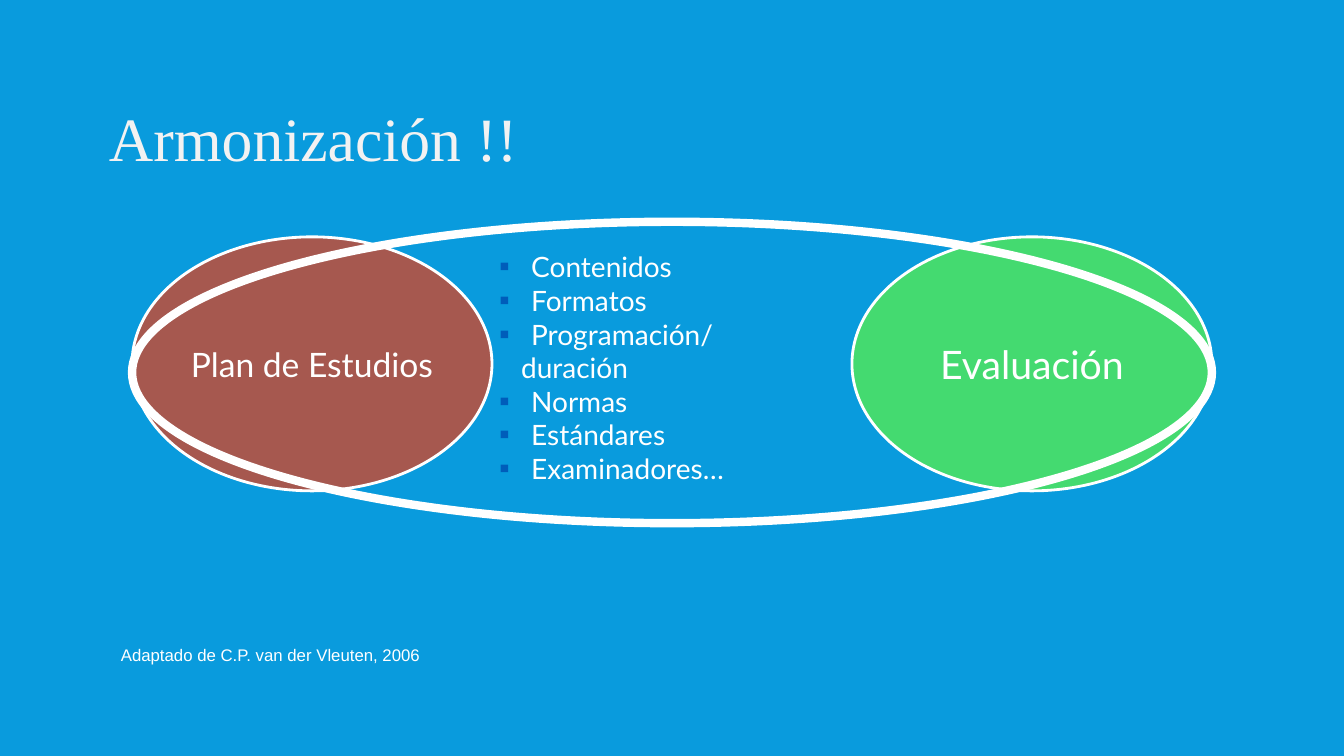
import pptx
import pptx.dml.color
import pptx.enum.shapes
import pptx.enum.text
import pptx.oxml
import pptx.oxml.ns
import pptx.util
from pptx.util import Inches

RGBColor = pptx.dml.color.RGBColor
ANCHOR = pptx.enum.text.MSO_ANCHOR
ALIGN = pptx.enum.text.PP_ALIGN

SKY = RGBColor(0x09, 0x9B, 0xDD)
WHITE = RGBColor(0xFF, 0xFF, 0xFF)
OFF_WHITE = RGBColor(0xF2, 0xF2, 0xF2)
RED = RGBColor(0xFF, 0x33, 0x00)
GREEN = RGBColor(0x66, 0xFF, 0x33)
BULLET_BLUE = RGBColor(0x00, 0x5D, 0xBA)

TOPICS = [
    ("Contenidos", True),
    ("Formatos", True),
    ("Programación/", True),
    ("duración", False),
    ("Normas", True),
    ("Estándares", True),
    ("Examinadores…", True),
]


def write(p, text, name, size, color=WHITE):
    r = p.add_run()
    r.text = text
    font = {"name": name, "size": pptx.util.Pt(size)}
    for key, value in font.items():
        setattr(r.font, key, value)
    r.font.color.rgb = color


def set_indent(p, left, first=0):
    pPr = p._p.get_or_add_pPr()
    pPr.set("marL", str(Inches(left)))
    pPr.set("indent", str(Inches(first)))
    return pPr


def add_bullet(p):
    pPr = set_indent(p, 0.81, -0.31)
    ns = pptx.oxml.ns.nsdecls("a")
    for xml in (
        f'<a:buClr {ns}><a:srgbClr val="{BULLET_BLUE}"/></a:buClr>',
        f'<a:buSzPct {ns} val="55000"/>',
        f'<a:buFont {ns} typeface="Arial"/>',
        f'<a:buChar {ns} char="■"/>',
    ):
        pPr.append(pptx.oxml.parse_xml(xml))


def add_title(s, text):
    title = s.shapes.title
    box = {"left": 0.98, "top": 0.52, "width": 11.36, "height": 1.25}
    for key, value in box.items():
        setattr(title, key, Inches(value))
    tf = title.text_frame
    tf.vertical_anchor = ANCHOR.BOTTOM
    p = tf.paragraphs[0]
    p.alignment = ALIGN.LEFT
    p.line_spacing = 0.8
    write(p, text, "Times New Roman", 44, OFF_WHITE)


def add_ellipse(s, left, top, width, height, line_width, fill=None):
    """Add a white-outlined ellipse, see-through or with a 64 % opaque fill."""
    sp = s.shapes.add_shape(pptx.enum.shapes.MSO_SHAPE.OVAL, Inches(left),
                            Inches(top), Inches(width), Inches(height))
    sp.shadow.inherit = False
    sp.line.color.rgb = WHITE
    sp.line.width = pptx.util.Pt(line_width)
    if fill is None:
        sp.fill.background()
    else:
        sp.fill.solid()
        sp.fill.fore_color.rgb = fill
        color = sp._element.spPr.find(".//" + pptx.oxml.ns.qn("a:srgbClr"))
        ns = pptx.oxml.ns.nsdecls("a")
        color.append(pptx.oxml.parse_xml(f'<a:alpha {ns} val="64000"/>'))
    return sp


def add_concept(s, left, text, size, fill):
    sp = add_ellipse(s, left, 2.35, 3.57, 2.52, 2, fill)
    tf = sp.text_frame
    tf.word_wrap = False
    tf.vertical_anchor = ANCHOR.MIDDLE
    p = tf.paragraphs[0]
    p.alignment = ALIGN.CENTER
    write(p, text, "Lato", size)


def add_text_box(s, left, top, width, height):
    box = s.shapes.add_textbox(Inches(left), Inches(top),
                               Inches(width), Inches(height))
    box.text_frame.word_wrap = True
    return box.text_frame


def add_topics(s):
    tf = add_text_box(s, 4.36, 2.43, 4.62, 2.43)
    for i, (text, bulleted) in enumerate(TOPICS):
        p = tf.add_paragraph() if i else tf.paragraphs[0]
        if bulleted:
            add_bullet(p)
        else:
            set_indent(p, 0.71)
        write(p, text, "Lato", 20)


def add_credit(s, text):
    tf = add_text_box(s, 1.1, 6.35, 4.72, 0.3)
    write(tf.paragraphs[0], text, "Arial", 12)


def main():
    prs = pptx.Presentation()
    prs.slide_width = Inches(13.33)
    prs.slide_height = Inches(7.5)
    s = prs.slides.add_slide(prs.slide_layouts[5])
    s.background.fill.solid()
    s.background.fill.fore_color.rgb = SKY

    add_title(s, "Armonización !!")
    add_concept(s, 1.31, "Plan de Estudios", 24, RED)
    add_concept(s, 8.45, "Evaluación", 28, GREEN)
    add_topics(s)
    add_credit(s, "Adaptado de C.P. van der Vleuten, 2006")
    add_ellipse(s, 1.31, 2.2, 10.71, 2.99, 6)
    prs.save("out.pptx")


if __name__ == "__main__":
    main()
